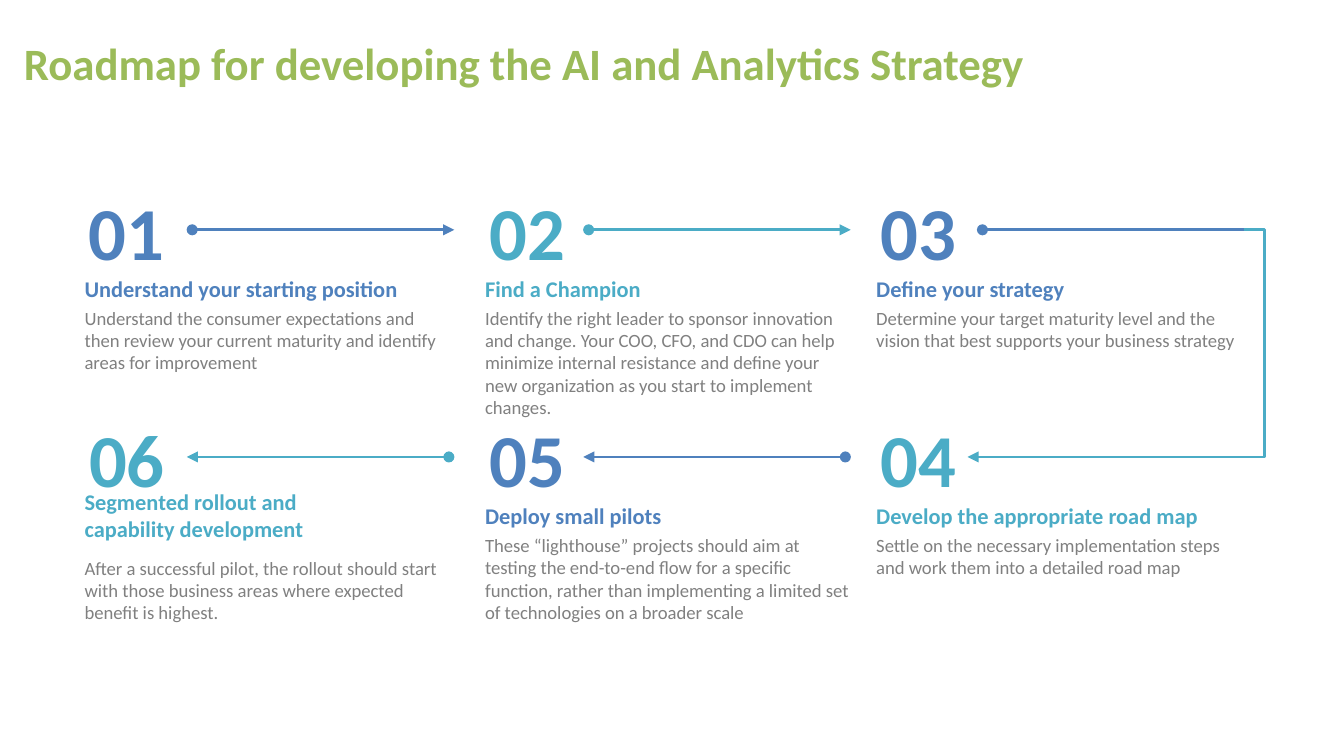
from lxml import etree
from pptx import Presentation
from pptx.dml.color import RGBColor
from pptx.enum.shapes import MSO_CONNECTOR
from pptx.enum.text import MSO_ANCHOR, PP_ALIGN
from pptx.oxml.ns import qn
from pptx.util import Inches, Pt

STRAIGHT, ELBOW = MSO_CONNECTOR.STRAIGHT, MSO_CONNECTOR.ELBOW
TOP, MIDDLE = MSO_ANCHOR.TOP, MSO_ANCHOR.MIDDLE
LEFT, CENTER = PP_ALIGN.LEFT, PP_ALIGN.CENTER

COLORS = {"green": "9BBB59", "blue": "4F81BD", "teal": "4BACC6", "grey": "808080"}
FORMATS = {
    "title": {"size": Pt(24), "bold": True},
    "number": {"size": Pt(40), "bold": True},
    "heading": {"size": Pt(12), "bold": True},
    "body": {"size": Pt(10), "bold": False},
}
COLUMNS = [0.63, 3.61, 6.52]
ROWS = [1.38, 3.07]
TEXT_WIDTH = 2.74
LINE_DROP = 0.33
ARROW_LENGTH = 1.95

STEPS = [
    ("01", 0, 0, "blue", ["Understand your starting position"],
     "Understand the consumer expectations and then review your current maturity and identify areas for improvement"),
    ("02", 1, 0, "teal", ["Find a Champion"],
     "Identify the right leader to sponsor innovation and change. Your COO, CFO, and CDO can help minimize internal resistance and define your new organization as you start to implement changes."),
    ("03", 2, 0, "blue", ["Define your strategy"],
     "Determine your target maturity level and the vision that best supports your business strategy"),
    ("04", 2, 1, "teal", ["Develop the appropriate road map"],
     "Settle on the necessary implementation steps and work them into a detailed road map"),
    ("05", 1, 1, "blue", ["Deploy small pilots"],
     "These “lighthouse” projects should aim at testing the end-to-end flow for a specific function, rather than implementing a limited set of technologies on a broader scale"),
    ("06", 0, 1, "teal", ["Segmented rollout and", "capability development"],
     "After a successful pilot, the rollout should start with those business areas where expected benefit is highest."),
]
ARROWS = [
    (1.43, 0, 1, "blue", "triangle"),
    (4.38, 0, 1, "teal", "triangle"),
    (7.31, 0, 1, "blue", None),
    (6.29, 1, -1, "blue", "triangle"),
    (3.34, 1, -1, "teal", "triangle"),
]


def add_text(page, place, lines, style, color, anchor=TOP, align=LEFT, inset=0, wrap=True):
    box = page.shapes.add_textbox(*[Inches(value) for value in place])
    frame = box.text_frame
    settings = {"word_wrap": wrap, "vertical_anchor": anchor,
                "margin_left": Inches(inset), "margin_right": Inches(inset),
                "margin_top": Inches(inset / 2), "margin_bottom": Inches(inset / 2)}
    for name, value in settings.items():
        setattr(frame, name, value)
    for index, line in enumerate(lines):
        para = frame.add_paragraph() if index else frame.paragraphs[0]
        para.alignment = align
        span = para.add_run()
        span.text = line
        span.font.name = "Calibri"
        span.font.color.rgb = RGBColor.from_string(COLORS[color])
        for name, value in FORMATS[style].items():
            setattr(span.font, name, value)


def add_arrow(page, kind, start, end, color, head, tail):
    arrow = page.shapes.add_connector(kind, *[Inches(value) for value in start + end])
    arrow.line.width = Pt(1.5)
    arrow.line.color.rgb = RGBColor.from_string(COLORS[color])
    outline = arrow.line._get_or_add_ln()
    for tag, shape in (("a:headEnd", head), ("a:tailEnd", tail)):
        if shape:
            etree.SubElement(outline, qn(tag), type=shape)
    etree.SubElement(arrow._element.spPr, qn("a:effectLst"))
    return arrow


deck = Presentation()
deck.slide_width = Inches(10)
deck.slide_height = deck.slide_width * 9 // 16
page = deck.slides.add_slide(deck.slide_layouts[6])

add_text(page, (0.08, 0.12, 8.25, 0.69),
         ["Roadmap for developing the AI and Analytics Strategy"],
         "title", "green", anchor=MIDDLE, inset=0.1)

for number, column, row, color, heading, body in STEPS:
    left, top = COLUMNS[column], ROWS[row]
    extra = len(heading) - 1
    number_left = left if number == "01" else left + 0.03
    number_width = 0.62 if number == "01" else 0.57
    add_text(page, (number_left, top, number_width, 0.67), [number], "number", color,
             align=CENTER, wrap=False)
    add_text(page, (left, top + 0.9 + 0.17 * extra, TEXT_WIDTH, 0.5), [body], "body", "grey")
    add_text(page, (left, top + 0.67 - 0.11 * extra, TEXT_WIDTH, 0.2 + 0.2 * extra),
             heading, "heading", color, anchor=MIDDLE)

for start, row, direction, color, tail in ARROWS:
    height = ROWS[row] + LINE_DROP
    add_arrow(page, STRAIGHT, (start, height), (start + direction * ARROW_LENGTH, height),
              color, "oval", tail)

turn = add_arrow(page, ELBOW, (9.26, ROWS[0] + LINE_DROP), (7.2, ROWS[1] + LINE_DROP),
                 "teal", None, "triangle")
guides = turn._element.spPr.find(qn("a:prstGeom")).find(qn("a:avLst"))
etree.SubElement(guides, qn("a:gd"), name="adj1", fmla="val -7200")

deck.save("out.pptx")
